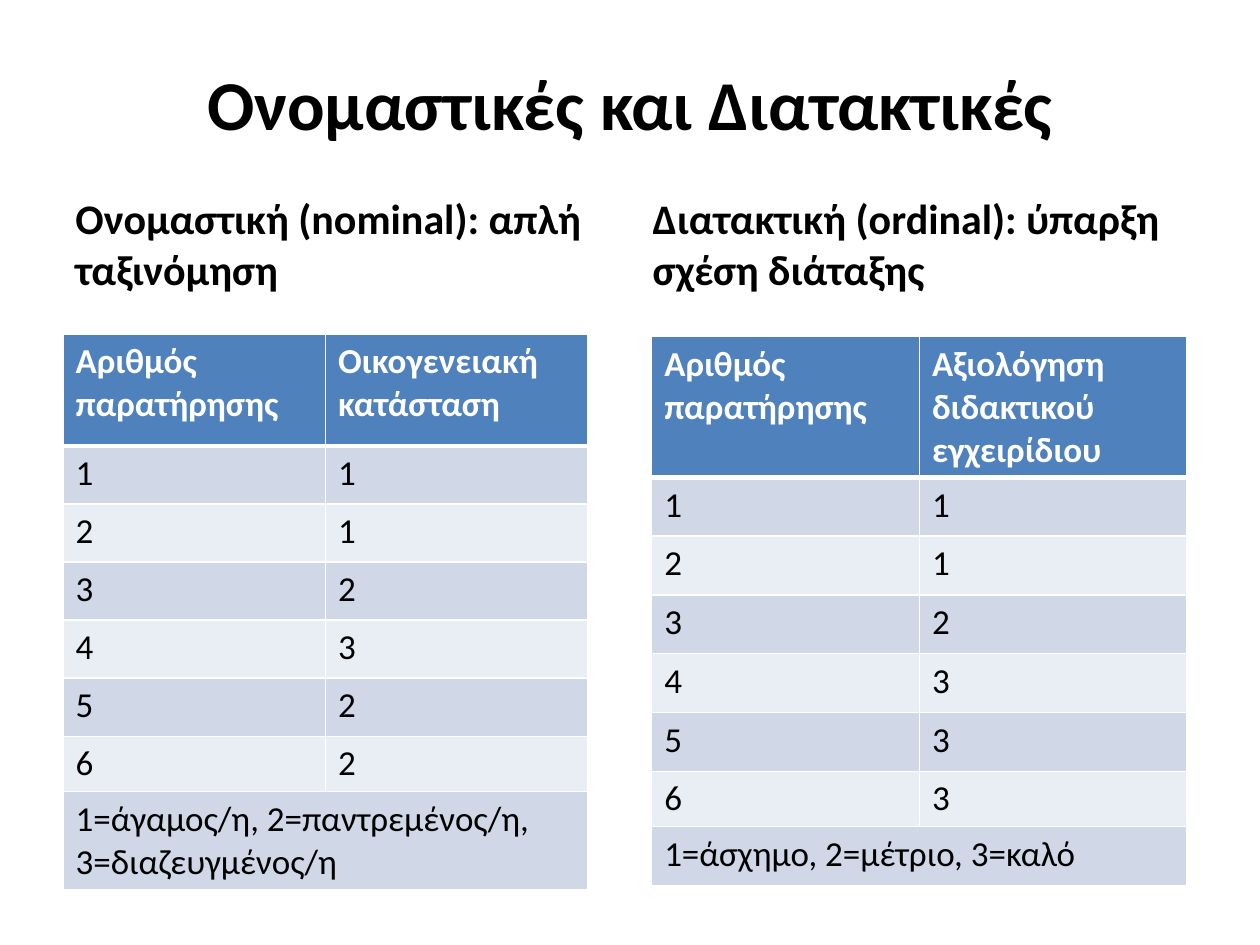
"""Build a slide that sets a nominal and an ordinal variable side by side."""
from dataclasses import dataclass

from lxml import etree
from pptx import Presentation
from pptx.dml.color import RGBColor
from pptx.enum.text import MSO_ANCHOR, PP_ALIGN
from pptx.oxml.ns import qn
from pptx.util import Pt

MIDDLE, BOTTOM = MSO_ANCHOR.MIDDLE, MSO_ANCHOR.BOTTOM
LEFT, CENTER = PP_ALIGN.LEFT, PP_ALIGN.CENTER
BLANK_LAYOUT = 6


@dataclass(frozen=True)
class Theme:
    font: str = "Calibri"
    black: str = "000000"
    white: str = "FFFFFF"
    header: str = "4F81BD"
    bands: tuple = ("D0D8E8", "E9EDF4")
    title_size: int = 40
    heading_size: int = 24
    table_size: int = 20
    thin: int = 1
    thick: int = 3


class SlideBuilder:
    def __init__(self, theme, page):
        self.theme = theme
        self.page = page

    def add_span(self, frame, text, size, color, bold, align=LEFT):
        para = frame.paragraphs[0]
        para.alignment = align
        span = para.add_run()
        span.text = text
        values = {"name": self.theme.font, "size": Pt(size), "bold": bold}
        for name, value in values.items():
            setattr(span.font, name, value)
        span.font.color.rgb = RGBColor.from_string(color)

    def add_text(self, bounds, text, size, anchor, align=LEFT):
        box = self.page.shapes.add_textbox(*map(Pt, bounds))
        frame = box.text_frame
        values = {"word_wrap": True, "vertical_anchor": anchor}
        for name, value in values.items():
            setattr(frame, name, value)
        self.add_span(frame, text, size, self.theme.black, True, align)

    def add_borders(self, cell, widths):
        properties = cell._tc.get_or_add_tcPr()
        for side, width in widths.items():
            line = etree.SubElement(properties, qn(f"a:ln{side}"), w=str(Pt(width)))
            fill = etree.SubElement(line, qn("a:solidFill"))
            etree.SubElement(fill, qn("a:srgbClr"), val=self.theme.white)

    def fill_cell(self, cell, row, text):
        theme = self.theme
        is_header = row == 0
        self.add_borders(cell, {
            "L": theme.thin,
            "R": theme.thin,
            "T": theme.thick if row == 1 else theme.thin,
            "B": theme.thick if is_header else theme.thin,
        })
        fill = theme.header if is_header else theme.bands[(row - 1) % 2]
        cell.fill.solid()
        cell.fill.fore_color.rgb = RGBColor.from_string(fill)
        if text:
            color = theme.white if is_header else theme.black
            self.add_span(cell.text_frame, text, theme.table_size, color, is_header)

    def add_table(self, bounds, headers, values, legend, heights):
        observations = [(str(number), str(value)) for number, value in enumerate(values, 1)]
        rows = [headers, *observations, (legend, "")]
        left, top, width = bounds
        frame = self.page.shapes.add_table(
            len(rows), len(headers), Pt(left), Pt(top), Pt(width), Pt(sum(heights)))
        table = frame.table
        for row, height in zip(table.rows, heights):
            row.height = Pt(height)
        last = len(rows) - 1
        table.cell(last, 0).merge(table.cell(last, len(headers) - 1))
        for row, texts in enumerate(rows):
            for column, text in enumerate(texts):
                self.fill_cell(table.cell(row, column), row, text)


def main():
    theme = Theme()
    deck = Presentation()
    deck.slide_width, deck.slide_height = Pt(720), Pt(540)
    page = deck.slides.add_slide(deck.slide_layouts[BLANK_LAYOUT])
    builder = SlideBuilder(theme, page)

    builder.add_text((36, 21.6, 648, 74.2), "Ονομαστικές και Διατακτικές",
                     theme.title_size, MIDDLE, CENTER)
    builder.add_text((36, 124.6, 318.2, 46.8), "Ονομαστική (nominal): απλή ταξινόμηση",
                     theme.heading_size, BOTTOM)
    builder.add_table((36, 190.8, 300), ("Αριθμός παρατήρησης", "Οικογενειακή κατάσταση"),
                      (1, 1, 2, 3, 2, 2), "1=άγαμος/η, 2=παντρεμένος/η, 3=διαζευγμένος/η",
                      [64] + [33.2] * 5 + [31.6, 56])
    builder.add_text((365.8, 121, 318.2, 50.4), "Διατακτική (ordinal): ύπαρξη σχέση διάταξης",
                     theme.heading_size, BOTTOM)
    builder.add_table((372.4, 192.4, 306), ("Αριθμός παρατήρησης", "Αξιολόγηση διδακτικού εγχειρίδιου"),
                      (1, 1, 2, 3, 3, 3), "1=άσχημο, 2=μέτριο, 3=καλό",
                      [80.4] + [33.6] * 5 + [31.6, 33.6])
    deck.save("out.pptx")


if __name__ == "__main__":
    main()
